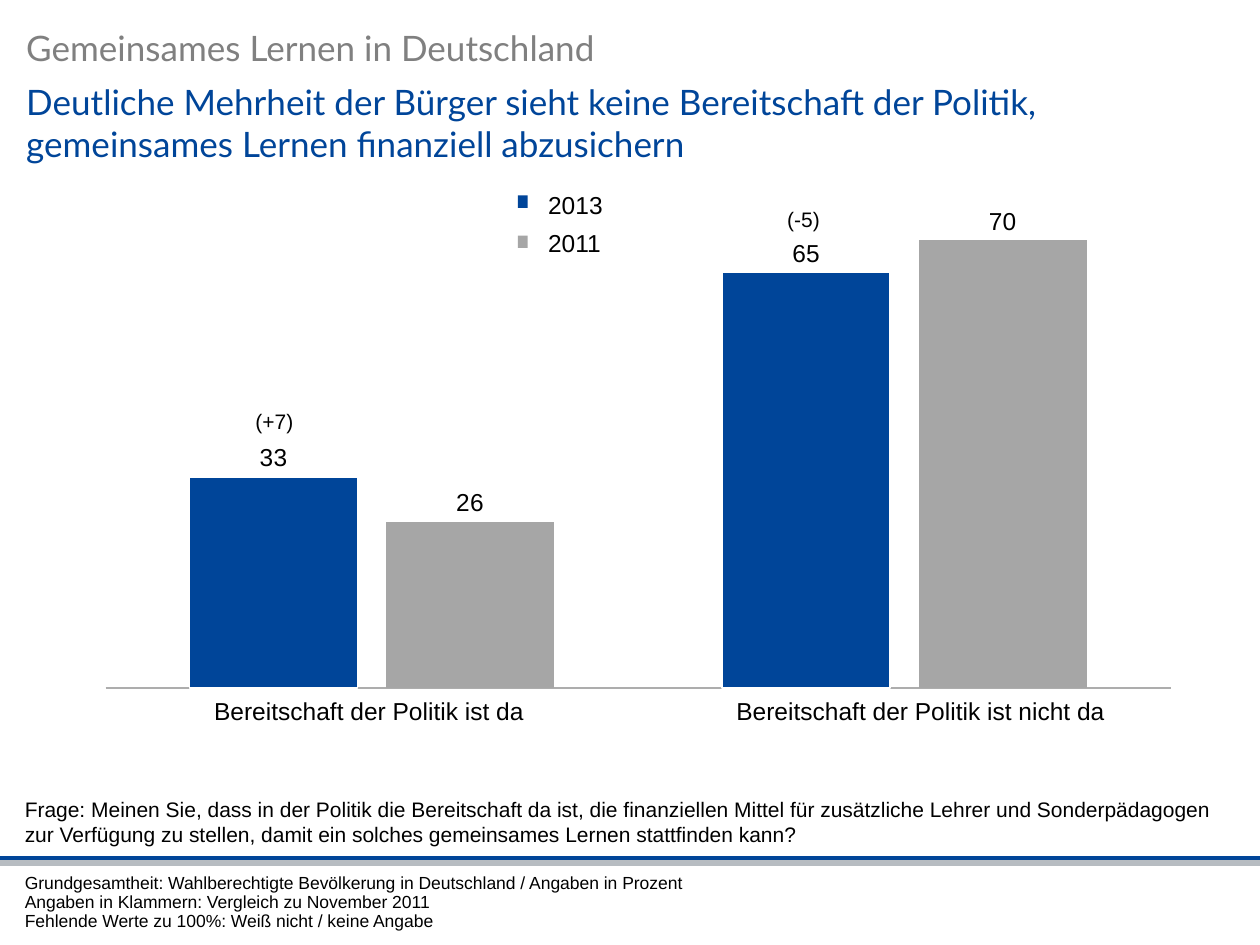
from dataclasses import dataclass

from lxml import etree
from pptx import Presentation
from pptx.chart.data import CategoryChartData
from pptx.dml.color import RGBColor
from pptx.enum.chart import XL_CHART_TYPE, XL_LABEL_POSITION, XL_TICK_LABEL_POSITION, XL_TICK_MARK
from pptx.enum.shapes import MSO_CONNECTOR, MSO_SHAPE
from pptx.enum.text import MSO_ANCHOR, PP_ALIGN
from pptx.oxml.ns import qn
from pptx.util import Cm, Pt

COLUMNS = XL_CHART_TYPE.COLUMN_CLUSTERED
OUTSIDE_END = XL_LABEL_POSITION.OUTSIDE_END
NO_LABELS = XL_TICK_LABEL_POSITION.NONE
NO_TICKS = XL_TICK_MARK.NONE
STRAIGHT = MSO_CONNECTOR.STRAIGHT
RECTANGLE = MSO_SHAPE.RECTANGLE
TOP, BOTTOM = MSO_ANCHOR.TOP, MSO_ANCHOR.BOTTOM
CENTER = PP_ALIGN.CENTER


@dataclass(frozen=True)
class Theme:
    blue: RGBColor = RGBColor.from_string("004599")
    bar_gray: RGBColor = RGBColor.from_string("A6A6A6")
    axis_gray: RGBColor = RGBColor.from_string("ADADAD")
    rule_gray: RGBColor = RGBColor.from_string("B7BCC1")
    title_gray: RGBColor = RGBColor.from_string("808080")
    black: RGBColor = RGBColor.from_string("000000")
    white: RGBColor = RGBColor.from_string("FFFFFF")
    heading_font: str = "Lato"
    body_font: str = "Arial"
    heading: Pt = Pt(20)
    label: Pt = Pt(14)
    note: Pt = Pt(12)
    footer: Pt = Pt(10)


THEME = Theme()
YEARS = {
    "2013": ((33, 65), THEME.blue),
    "2011": ((26, 70), THEME.bar_gray),
}
ANSWERS = ("Bereitschaft der Politik ist da", "Bereitschaft der Politik ist nicht da")
FOOTER_LINES = (
    "Grundgesamtheit: Wahlberechtigte Bevölkerung in Deutschland / Angaben in Prozent",
    "Angaben in Klammern: Vergleich zu November 2011",
    "Fehlende Werte zu 100%: Weiß nicht / keine Angabe",
)


def style_font(font, size, color=THEME.black, name=THEME.body_font):
    font.size, font.name = size, name
    font.color.rgb = color


def set_margins(holder, left, top, right, bottom):
    margins = {"left": left, "top": top, "right": right, "bottom": bottom}
    for side, length in margins.items():
        setattr(holder, f"margin_{side}", Cm(length))


def add_text(slide, box, lines, size, color=THEME.black, name=THEME.body_font,
             margins=(0, 0, 0, 0), anchor=TOP, spacing=None):
    frame = slide.shapes.add_textbox(*map(Cm, box)).text_frame
    frame.word_wrap = True
    frame.vertical_anchor = anchor
    set_margins(frame, *margins)
    frame.text = "\n".join(lines)
    for paragraph in frame.paragraphs:
        paragraph.line_spacing = spacing
        for run in paragraph.runs:
            style_font(run.font, size, color, name)


def add_label(slide, box, text, size):
    add_text(slide, box, [text], size, margins=(0.25, 0.13, 0.25, 0.13))


def add_rule(slide, y, color):
    rule = slide.shapes.add_connector(STRAIGHT, 0, Cm(y), Cm(25.4), Cm(y))
    rule.line.color.rgb = color
    rule.line.width = Pt(3)
    etree.SubElement(rule._element.spPr, qn("a:effectLst"))


def add_legend_key(slide, y, color):
    key = slide.shapes.add_shape(RECTANGLE, Cm(10.44), Cm(y), Cm(0.2), Cm(0.25))
    key.shadow.inherit = False
    key.fill.solid()
    key.fill.fore_color.rgb = color
    key.line.fill.background()


def fix_plot_area(chart, width, height):
    plot_area = chart._chartSpace.chart.plotArea
    for old in plot_area.findall(qn("c:layout")):
        plot_area.remove(old)
    layout = etree.Element(qn("c:layout"))
    manual = etree.SubElement(layout, qn("c:manualLayout"))
    settings = {"layoutTarget": "inner", "xMode": "edge", "yMode": "edge",
                "x": 0, "y": 0, "w": width, "h": height}
    for tag, value in settings.items():
        etree.SubElement(manual, qn(f"c:{tag}")).set("val", str(value))
    plot_area.insert(0, layout)


def add_bar_chart(slide):
    results = CategoryChartData()
    results.categories = ["1", "2"]
    for year, (shares, _) in YEARS.items():
        results.add_series(year, shares)
    chart = slide.shapes.add_chart(
        COLUMNS, Cm(2.11), Cm(3.56), Cm(21.51), Cm(10.52), results).chart
    chart.has_legend = False
    chart.has_title = False
    style_font(chart.font, THEME.label)
    fix_plot_area(chart, 1, 0.98)

    answers = chart.category_axis
    answers.tick_label_position = NO_LABELS
    answers.major_tick_mark = NO_TICKS
    answers.format.line.color.rgb = THEME.axis_gray
    answers.format.line.width = Pt(1)

    percent = chart.value_axis
    scale = {"minimum_scale": 0, "maximum_scale": 80, "major_unit": 20,
             "has_major_gridlines": False, "visible": False}
    for setting, value in scale.items():
        setattr(percent, setting, value)

    plot = chart.plots[0]
    plot.gap_width, plot.overlap = 100, -17
    plot.vary_by_categories = False
    for series, (_, color) in zip(plot.series, YEARS.values()):
        series.format.fill.solid()
        series.format.fill.fore_color.rgb = color
        labels = series.data_labels
        labels.show_value = True
        labels.position = OUTSIDE_END
        style_font(labels.font, THEME.label)
    outline = plot.series[0].format.line
    outline.color.rgb = THEME.white
    outline.width = Pt(1)


def add_answer_table(slide):
    table = slide.shapes.add_table(
        1, 2, Cm(0.89), Cm(13.97), Cm(23.6), Cm(0.78)).table
    table.first_row = table.horz_banding = False
    for column, width in zip(table.columns, (11.74, 11.86)):
        column.width = Cm(width)
    for cell, answer, left in zip(table.rows[0].cells, ANSWERS, (1.46, 0.1)):
        cell.fill.background()
        set_margins(cell, left, 0.1, 0.1, 0.1)
        cell.text = answer
        paragraph = cell.text_frame.paragraphs[0]
        paragraph.alignment = CENTER
        style_font(paragraph.runs[0].font, THEME.label)


def main():
    deck = Presentation()
    deck.slide_width, deck.slide_height = Cm(25.4), Cm(19.05)
    slide = deck.slides.add_slide(deck.slide_layouts[6])

    add_rule(slide, 17.3, THEME.blue)
    add_rule(slide, 17.4, THEME.rule_gray)
    add_text(slide, (0.53, 0.53, 21.23, 1.09), ["Gemeinsames Lernen in Deutschland"],
             THEME.heading, THEME.title_gray, THEME.heading_font)
    add_bar_chart(slide)
    add_text(slide, (0.5, 17.63, 19.33, 1.24), FOOTER_LINES, THEME.footer, spacing=0.9)
    add_answer_table(slide)
    add_text(slide, (0.5, 15.52, 24.46, 1.55),
             ["Frage: Meinen Sie, dass in der Politik die Bereitschaft da ist, die finanziellen "
              "Mittel für zusätzliche Lehrer und Sonderpädagogen zur Verfügung zu stellen, "
              "damit ein solches gemeinsames Lernen stattfinden kann?"],
             THEME.note, anchor=BOTTOM)
    add_text(slide, (0.53, 1.63, 21.23, 2.03),
             ["Deutliche Mehrheit der Bürger sieht keine Bereitschaft der Politik, "
              "gemeinsames Lernen finanziell abzusichern"],
             THEME.heading, THEME.blue, THEME.heading_font)
    add_label(slide, (15.62, 4.04, 1.75, 0.76), "(-5)", THEME.note)
    add_label(slide, (4.9, 8.1, 2.13, 0.76), "(+7)", THEME.note)
    for row, (year, (_, color)) in enumerate(YEARS.items()):
        add_label(slide, (10.8, 3.71 + 0.76 * row, 2.9, 0.86), year, THEME.label)
        add_legend_key(slide, 3.94 + 0.81 * row, color)

    deck.save("out.pptx")


if __name__ == "__main__":
    main()
